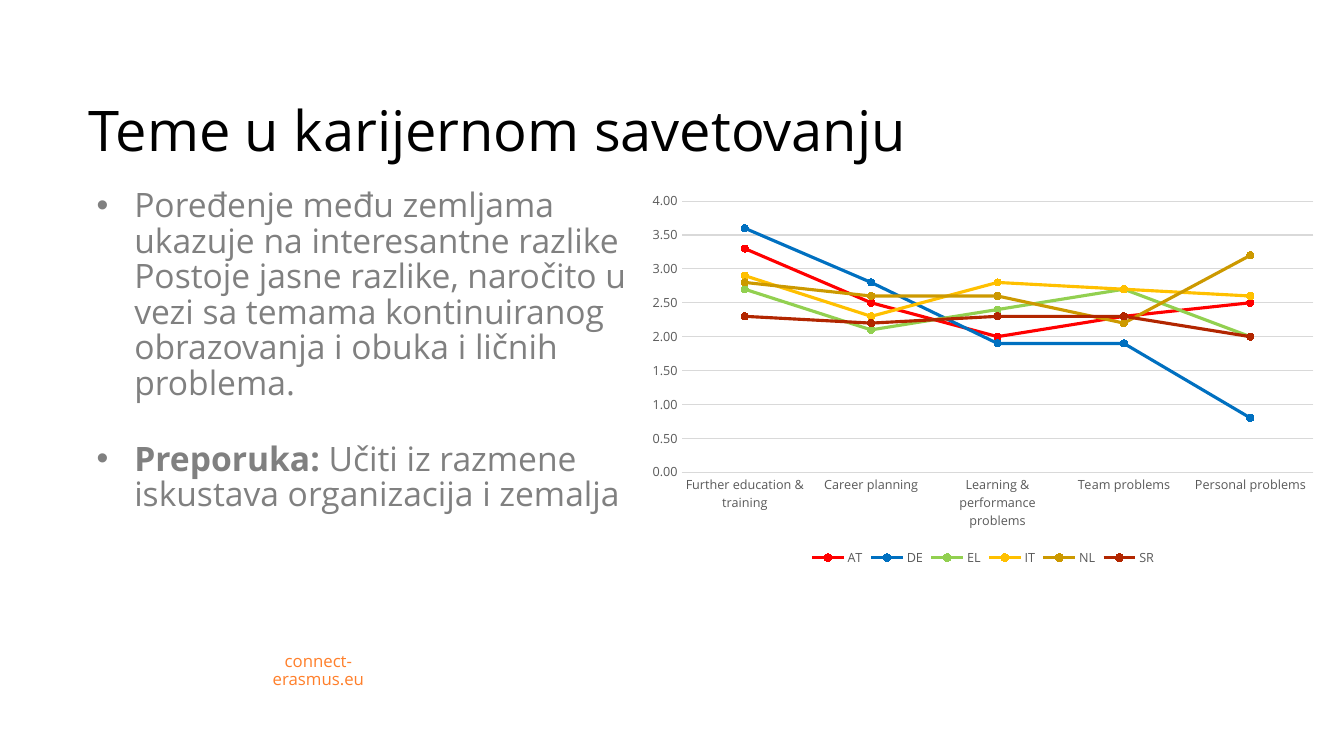
from pptx import Presentation
from pptx import util as u
from pptx.chart import data as chart_data
from pptx.dml import color as dml
from pptx.enum import chart as ch
from pptx.enum import text
from pptx.oxml import ns
from lxml import etree

FONT = "Open Sans"
COLORS = {
    "title": "000000", "body": "808080", "site": "FF7F2A",
    "axis": "595959", "grid": "D9D9D9",
    "AT": "FF0000", "DE": "0070C0", "EL": "92D050",
    "IT": "FFC000", "NL": "CC9900", "SR": "B22600",
}
TOPICS = ["Further education & training", "Career planning",
          "Learning & performance problems", "Team problems",
          "Personal problems"]
RATINGS = {
    "AT": [3.3, 2.5, 2, 2.3, 2.5],
    "DE": [3.6, 2.8, 1.9, 1.9, 0.8],
    "EL": [2.7, 2.1, 2.4, 2.7, 2],
    "IT": [2.9, 2.3, 2.8, 2.7, 2.6],
    "NL": [2.8, 2.6, 2.6, 2.2, 3.2],
    "SR": [2.3, 2.2, 2.3, 2.3, 2],
}
BULLETS = [
    [("Poređenje među zemljama ukazuje na interesantne razlike "
      "Postoje jasne razlike, naročito u vezi sa temama kontinuiranog "
      "obrazovanja i obuka i ličnih problema.", False)],
    [("Preporuka: ", True),
     ("Učiti iz razmene iskustava organizacija i zemalja", False)],
]


def rgb(name):
    return dml.RGBColor.from_string(COLORS[name])


def style_font(font, size, color, bold=False):
    font.name = FONT
    font.size = u.Pt(size)
    font.bold = bold
    font.color.rgb = rgb(color)


def add_run(p, content, size=24, color="body", bold=False):
    r = p.add_run()
    r.text = content
    style_font(r.font, size, color, bold)


def place(sp, left, top, width, height):
    sp.left, sp.top = u.Cm(left), u.Cm(top)
    sp.width, sp.height = u.Cm(width), u.Cm(height)


def set_bullet(p, indent):
    pPr = p._p.get_or_add_pPr()
    pPr.set("marL", str(u.Cm(indent)))
    pPr.set("indent", str(-u.Cm(indent)))
    etree.SubElement(pPr, ns.qn("a:buFont")).set("typeface", "Arial")
    etree.SubElement(pPr, ns.qn("a:buChar")).set("char", "•")


def fill_title(s):
    sp = s.shapes.title
    place(sp, 1.98, 0.18, 29.69, 4.06)
    tf = sp.text_frame
    tf.auto_size = text.MSO_AUTO_SIZE.NONE
    tf.vertical_anchor = text.MSO_ANCHOR.BOTTOM
    p = tf.paragraphs[0]
    p.alignment = text.PP_ALIGN.LEFT
    p.line_spacing = 0.9
    add_run(p, "Teme u karijernom savetovanju", size=40, color="title")


def fill_body(s):
    sp = s.placeholders[1]
    place(sp, 2.18, 4.65, 13.92, 11.3)
    tf = sp.text_frame
    tf.auto_size = text.MSO_AUTO_SIZE.NONE
    for i, runs in enumerate(BULLETS):
        p = tf.add_paragraph() if i else tf.paragraphs[0]
        set_bullet(p, 0.95)
        p.line_spacing = 0.88
        p.space_before = u.Pt(29 if i else 0)
        for content, bold in runs:
            add_run(p, content, bold=bold)


def add_site(s):
    sp = s.shapes.add_textbox(u.Cm(5.79), u.Cm(16.54), u.Cm(4.47), u.Cm(0.76))
    tf = sp.text_frame
    tf.word_wrap = True
    tf.margin_left = tf.margin_right = u.Cm(0.6)
    tf.vertical_anchor = text.MSO_ANCHOR.MIDDLE
    p = tf.paragraphs[0]
    p.alignment = text.PP_ALIGN.CENTER
    p.line_spacing = 0.88
    add_run(p, "connect-erasmus.eu", size=12, color="site")


def style_axis(axis):
    axis.major_tick_mark = axis.minor_tick_mark = ch.XL_TICK_MARK.NONE
    style_font(axis.tick_labels.font, 9, "axis")


def style_line(line, color, width):
    line.color.rgb = rgb(color)
    line.width = u.Pt(width)


def style_series(series):
    series.smooth = False
    style_line(series.format.line, series.name, 2.25)
    marker = series.marker
    marker.style = ch.XL_MARKER_STYLE.CIRCLE
    marker.size = 5
    marker.format.fill.solid()
    marker.format.fill.fore_color.rgb = rgb(series.name)
    style_line(marker.format.line, series.name, 0.75)


def add_ratings_chart(s):
    data = chart_data.CategoryChartData(number_format="###0.00")
    data.categories = TOPICS
    for country, values in RATINGS.items():
        data.add_series(country, values)
    chart = s.shapes.add_chart(
        ch.XL_CHART_TYPE.LINE_MARKERS, u.Cm(16.1), u.Cm(4.65),
        u.Cm(17.35), u.Cm(9.73), data).chart
    style_font(chart.font, 10, "title")
    chart.has_title = False
    chart.has_legend = True
    chart.legend.position = ch.XL_LEGEND_POSITION.BOTTOM
    chart.legend.include_in_layout = False
    style_font(chart.legend.font, 9, "axis")

    style_axis(chart.category_axis)
    style_line(chart.category_axis.format.line, "grid", 0.75)
    axis = chart.value_axis
    style_axis(axis)
    axis.minimum_scale, axis.maximum_scale, axis.major_unit = 0, 4, 0.5
    axis.tick_labels.number_format = "###0.00"
    axis.tick_labels.number_format_is_linked = False
    axis.format.line.fill.background()
    style_line(axis.major_gridlines.format.line, "grid", 0.75)

    plot = chart.plots[0]
    plot.vary_by_categories = False
    for series in plot.series:
        style_series(series)


def main():
    prs = Presentation()
    prs.slide_width, prs.slide_height = u.Cm(33.87), u.Cm(19.05)
    s = prs.slides.add_slide(prs.slide_layouts[1])
    fill_title(s)
    fill_body(s)
    add_site(s)
    add_ratings_chart(s)
    prs.save("out.pptx")


if __name__ == "__main__":
    main()
